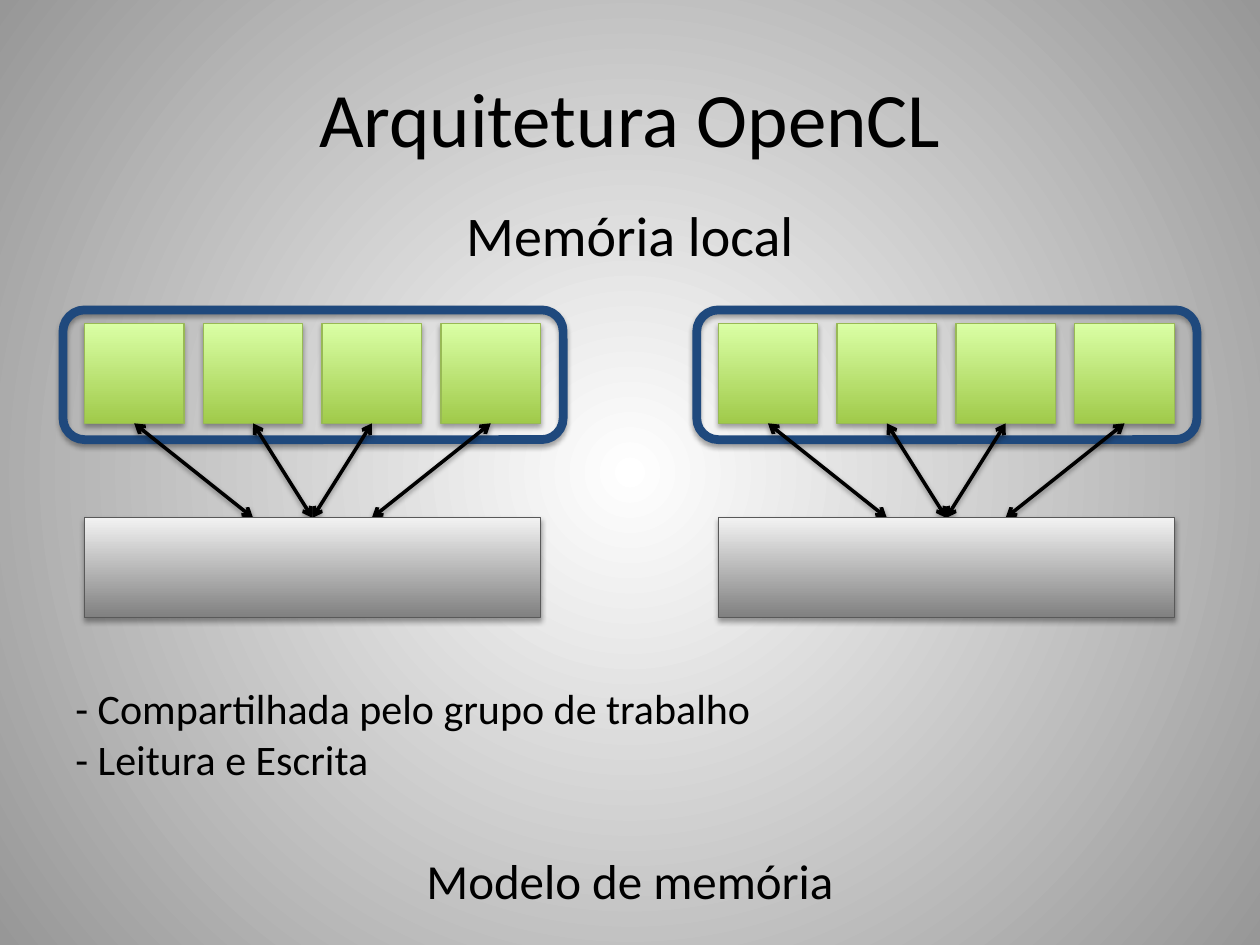
"""Build the slide on OpenCL local memory."""
from lxml import etree
from pptx import Presentation
from pptx import util as u
from pptx.dml.color import RGBColor
from pptx.enum import shapes, text
from pptx.oxml import ns

WIDTH, HEIGHT = 10, 7.5
BLACK = RGBColor(0x00, 0x00, 0x00)
WHITE = RGBColor(0xFF, 0xFF, 0xFF)
BACKDROP = RGBColor(0x97, 0x97, 0x97)
NAVY = RGBColor(0x1F, 0x49, 0x7D)
GREEN_LINE = RGBColor(0x98, 0xB9, 0x55)
GREENS = RGBColor(0xA0, 0xCA, 0x4A), RGBColor(0xDA, 0xFF, 0xA5)
GRAY_LINE = RGBColor(0x59, 0x59, 0x59)
GRAYS = RGBColor(0x80, 0x80, 0x80), RGBColor(0xF2, 0xF2, 0xF2)

MARGIN = 0.05 * WIDTH
CONTENT = 0.9 * WIDTH
GROUP_LEFTS = 0.5, 5.53
FRAME_TOP, FRAME_WIDTH, FRAME_HEIGHT = 2.46, 3.97, 1.03
ITEM_TOP, MEMORY_TOP = 2.57, 4.11
INSET, SIDE, BAR_WIDTH = 0.17, 0.79, 3.62
COLUMNS = 4
PITCH = (BAR_WIDTH - SIDE) / (COLUMNS - 1)


def inches(*lengths):
    """Turn numbers into inch lengths."""
    return [u.Inches(length) for length in lengths]


def add_child(parent, tag, **values):
    """Append a DrawingML element with the given attributes."""
    attributes = {name: str(value) for name, value in values.items()}
    return etree.SubElement(parent, ns.qn(tag), attributes)


def apply_format(target, values):
    """Set attributes of an object from a dict."""
    for name, value in values.items():
        setattr(target, name, value)


def set_gradient(fill, colors):
    """Give a fill two gradient stops."""
    fill.gradient()
    for stop, color in zip(fill.gradient_stops, colors):
        stop.color.rgb = color


def set_line(line, color, points):
    """Give a line its colour and width."""
    line.color.rgb = color
    line.width = u.Pt(points)


def add_shadow(shape, alpha, distance):
    """Cast a soft black shadow straight down."""
    effects = add_child(shape._element.spPr, "a:effectLst")
    shadow = add_child(effects, "a:outerShdw", blurRad=u.Pt(3.1),
                       dist=u.Pt(distance), dir=5400000, rotWithShape=0)
    color = add_child(shadow, "a:srgbClr", val=BLACK)
    add_child(color, "a:alpha", val=alpha * 1000)


def set_background(page):
    """Fill the page with a gradient that spreads from its centre."""
    set_gradient(page.background.fill, (WHITE, BACKDROP))
    gradient = page._element.xpath(".//p:bg//a:gradFill")[0]
    gradient.remove(gradient.find(ns.qn("a:lin")))
    route = add_child(gradient, "a:path", path="circle")
    add_child(route, "a:fillToRect", l=50000, t=50000, r=50000, b=50000)


def add_text(page, top, height, lines, size, align=text.PP_ALIGN.CENTER,
             anchor=text.MSO_ANCHOR.TOP):
    """Add a text box across the content width."""
    box = page.shapes.add_textbox(*inches(MARGIN, top, CONTENT, height))
    frame = box.text_frame
    apply_format(frame, {"word_wrap": True, "vertical_anchor": anchor})
    frame.text = "\n".join(lines)
    for para in frame.paragraphs:
        para.alignment = align
        for span in para.runs:
            apply_format(span.font, {"name": "Calibri", "size": u.Pt(size)})
            span.font.color.rgb = BLACK


def add_block(page, kind, place, line_color, points, colors=None):
    """Add an outlined shape, with a vertical gradient if colours are given."""
    block = page.shapes.add_shape(kind, *inches(*place))
    if colors:
        set_gradient(block.fill, colors)
        block.fill.gradient_angle = 90
    else:
        block.fill.background()
    set_line(block.line, line_color, points)
    add_shadow(block, 35, 1.8)


def add_arrow(page, start, end):
    """Add a straight line with an arrowhead at both ends."""
    arrow = page.shapes.add_connector(
        shapes.MSO_CONNECTOR.STRAIGHT, *inches(*start, *end))
    set_line(arrow.line, BLACK, 2)
    for tag in ("a:headEnd", "a:tailEnd"):
        add_child(arrow.line._get_or_add_ln(), tag, type="arrow")
    add_shadow(arrow, 38, 1.6)


def add_work_group(page, left):
    """Add a framed row of work items linked to its local memory."""
    rectangle = shapes.MSO_SHAPE.RECTANGLE
    add_block(page, shapes.MSO_SHAPE.ROUNDED_RECTANGLE,
              (left, FRAME_TOP, FRAME_WIDTH, FRAME_HEIGHT), NAVY, 5)
    first = left + INSET
    item_lefts = [first + column * PITCH for column in range(COLUMNS)]
    for item_left in item_lefts:
        add_block(page, rectangle, (item_left, ITEM_TOP, SIDE, SIDE),
                  GREEN_LINE, 0.75, GREENS)
    centers = [item_left + SIDE / 2 for item_left in item_lefts]
    middle = first + BAR_WIDTH / 2
    targets = centers[1], middle, middle, centers[2]
    for center, target in zip(centers, targets):
        add_arrow(page, (center, ITEM_TOP + SIDE), (target, MEMORY_TOP))
    add_block(page, rectangle, (first, MEMORY_TOP, BAR_WIDTH, SIDE),
              GRAY_LINE, 0.75, GRAYS)


def main():
    """Build and save the deck."""
    deck = Presentation()
    deck.slide_width, deck.slide_height = inches(WIDTH, HEIGHT)
    page = deck.slides.add_slide(deck.slide_layouts[6])
    set_background(page)
    add_text(page, 0.3, 1.25, ["Arquitetura OpenCL"], 44,
             anchor=text.MSO_ANCHOR.MIDDLE)
    add_text(page, 6.7, 0.57, ["Modelo de memória"], 28)
    add_text(page, 1.54, 0.64, ["Memória local"], 32)
    add_text(page, 5.37, 0.91, ["- Compartilhada pelo grupo de trabalho",
                                "- Leitura e Escrita"],
             24, align=text.PP_ALIGN.LEFT)
    for left in GROUP_LEFTS:
        add_work_group(page, left)
    deck.save("out.pptx")


if __name__ == "__main__":
    main()
